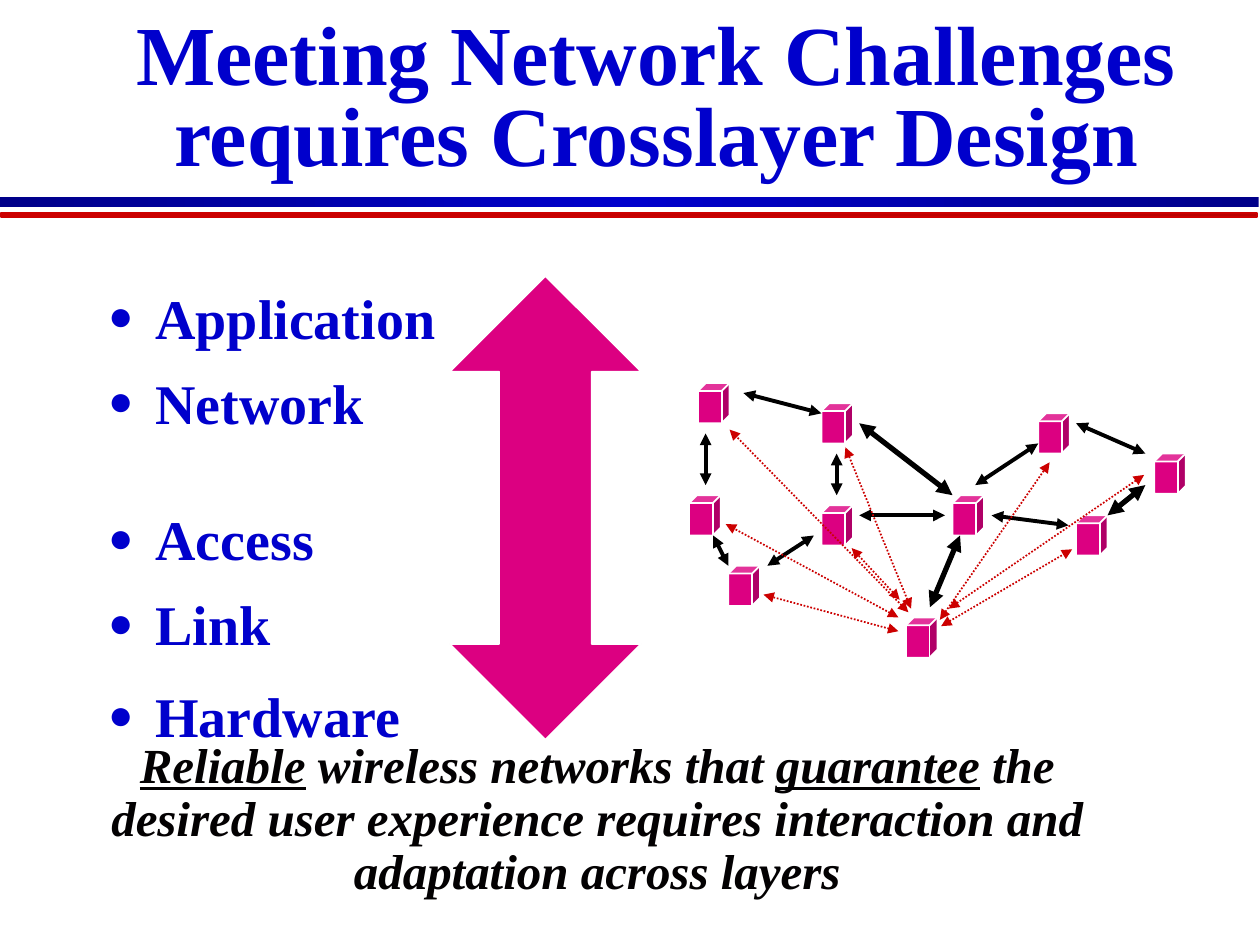
"""Build the slide on meeting network challenges through crosslayer design."""
import pptx
import pptx.dml.color
import pptx.enum.dml
import pptx.enum.shapes
import pptx.enum.text
import pptx.oxml
import pptx.oxml.ns
import pptx.util
from lxml import etree

Pt = pptx.util.Pt
RGB = pptx.dml.color.RGBColor.from_string
SHAPE = pptx.enum.shapes.MSO_SHAPE
ALIGN = pptx.enum.text.PP_ALIGN
ANCHOR = pptx.enum.text.MSO_ANCHOR
DASH = pptx.enum.dml.MSO_LINE
qn = pptx.oxml.ns.qn

THEME = {
    "font": "Times New Roman",
    "blue": "0000CC", "navy": "000089", "red": "CC0000", "dark_red": "B90000",
    "magenta": "DC0081", "white": "FFFFFF", "black": "000000", "ink": "030102",
    "title_size": 48, "layer_size": 32, "message_size": 28,
}


def apply(target, **values):
    for name, value in values.items():
        setattr(target, name, value)


def write(paragraph, text, size, color, **extra):
    run = paragraph.add_run()
    run.text = text
    apply(run.font, name=THEME["font"], size=Pt(THEME[size]), bold=True, **extra)
    run.font.color.rgb = RGB(THEME[color])


deck = pptx.Presentation()
apply(deck, slide_width=Pt(720), slide_height=Pt(540))
slide = deck.slides.add_slide(deck.slide_layouts[5])
shapes = slide.shapes

rules = [
    (0, 112.3, 719.3, 5.8, [(0, "navy"), (50, "blue"), (100, "navy")], None),
    (0.7, 121.7, 717.8, 2.2, [(0, "red"), (100, "dark_red")], "red"),
]
for left, top, width, height, stops, edge in rules:
    rule = shapes.add_shape(SHAPE.RECTANGLE, Pt(left), Pt(top), Pt(width), Pt(height))
    rule.shadow.inherit = False
    rule.fill.gradient()
    rule.fill.gradient_angle = 0
    stop_list = rule._element.spPr.find(".//" + qn("a:gsLst"))
    stop_list.clear()
    for position, color in stops:
        stop = etree.SubElement(stop_list, qn("a:gs"), pos=str(position * 1000))
        etree.SubElement(stop, qn("a:srgbClr"), val=THEME[color])
    if edge:
        rule.line.color.rgb = RGB(THEME[edge])
        rule.line.width = Pt(1)
    else:
        rule.line.fill.background()

title = shapes.title
apply(title, left=Pt(48.2), top=Pt(18), width=Pt(653.8), height=Pt(90))
apply(title.text_frame, word_wrap=True, vertical_anchor=ANCHOR.BOTTOM,
      auto_size=pptx.enum.text.MSO_AUTO_SIZE.NONE)
heading = title.text_frame.paragraphs[0]
apply(heading, alignment=ALIGN.CENTER, line_spacing=0.8)
write(heading, "Meeting Network Challenges requires Crosslayer Design", "title_size", "blue")

layers = shapes.add_textbox(Pt(54.7), Pt(150.5), Pt(556.6), Pt(344.2)).text_frame
layers.word_wrap = True
layer_rows = [
    ("Application", 1.2, 6.4), ("Network", 1.1, 6.4), ("Access", 1.0, 39.5),
    ("Link", 1.1, 6.4), ("Hardware", 1.2, 6.4),
]
for index, (layer, spacing, before) in enumerate(layer_rows):
    row = layers.add_paragraph() if index else layers.paragraphs[0]
    apply(row, line_spacing=spacing, space_before=Pt(before))
    properties = row._p.get_or_add_pPr()
    properties.set("marL", str(Pt(27)))
    properties.set("indent", str(Pt(-27)))
    bullet_color = etree.SubElement(properties, qn("a:buClr"))
    etree.SubElement(bullet_color, qn("a:srgbClr"), val=THEME["blue"])
    etree.SubElement(properties, qn("a:buSzPct"), val="75000")
    etree.SubElement(properties, qn("a:buFont"), typeface=THEME["font"])
    etree.SubElement(properties, qn("a:buChar"), char="●")
    write(row, layer, "layer_size", "blue")

solids = [(SHAPE.UP_DOWN_ARROW, 257, 157.7, 109.4, 265, (0.5, 0.484))]
node_corners = [
    (393.8, 283), (398.9, 218.9), (517.7, 352.8), (614.9, 294.5), (469.4, 288.7),
    (593.3, 236.2), (659.5, 259.2), (469.4, 230.4), (544.3, 283), (416.2, 323.3),
]
solids += [(SHAPE.CUBE, left, top, 18, 23, (0.25,)) for left, top in node_corners]
for preset, left, top, width, height, adjustments in solids:
    solid = shapes.add_shape(preset, Pt(left), Pt(top), Pt(width), Pt(height))
    solid.shadow.inherit = False
    for index, value in enumerate(adjustments):
        solid.adjustments[index] = value
    solid.fill.solid()
    solid.fill.fore_color.rgb = RGB(THEME["magenta"])
    solid.line.color.rgb = RGB(THEME["white"])
    solid.line.width = Pt(1)

message_box = shapes.add_textbox(Pt(51.1), Pt(419.8), Pt(580.3), Pt(99.4)).text_frame
message_box.word_wrap = True
message = message_box.paragraphs[0]
apply(message, alignment=ALIGN.CENTER, line_spacing=0.9)
message_parts = [
    ("Reliable", True), (" wireless networks that ", False), ("guarantee", True),
    (" the desired user experience requires interaction and adaptation across layers", False),
]
for text, underlined in message_parts:
    write(message, text, "message_size", "ink", italic=True, underline=underlined)

link_groups = [
    ("black", 2.25, DASH.SOLID, [
        (403.2, 247.7, 403.2, 277.2), (407.5, 306, 416.2, 323.3),
        (438.5, 323.3, 465.1, 306), (424.8, 224.6, 469.4, 236.2),
        (478.1, 259.2, 478.1, 283), (491, 294.5, 540, 294.5),
        (557.3, 277.2, 593.3, 253.4), (614.9, 241.9, 654.5, 259.2),
        (566.6, 294.5, 610.6, 300.2),
    ]),
    ("black", 3, DASH.SOLID, [
        (491, 241.9, 544.3, 283), (531.4, 347, 548.6, 306),
        (632.9, 294.5, 654.5, 277.2),
    ]),
    ("red", 1, DASH.ROUND_DOT, [
        (513.4, 360.7, 436.3, 339.8), (513.4, 352.8, 414.7, 299.5),
        (519.1, 349.9, 416.9, 245.5), (520.6, 347.8, 483.1, 255.6),
        (514.1, 342.7, 486.7, 313.2), (537.1, 354.2, 599.8, 264.2),
        (537.8, 357.8, 612.7, 313.9), (542.2, 347.8, 653.8, 271.4),
    ]),
]
for color, weight, dash, routes in link_groups:
    for route in routes:
        link = shapes.add_connector(pptx.enum.shapes.MSO_CONNECTOR.STRAIGHT, *map(Pt, route))
        link.line.color.rgb = RGB(THEME[color])
        apply(link.line, width=Pt(weight), dash_style=dash)
        outline = link.line._get_or_add_ln()
        for end in ("a:headEnd", "a:tailEnd"):
            etree.SubElement(outline, qn(end), type="triangle")
        etree.SubElement(link._element.spPr, qn("a:effectLst"))

deck.save("out.pptx")
